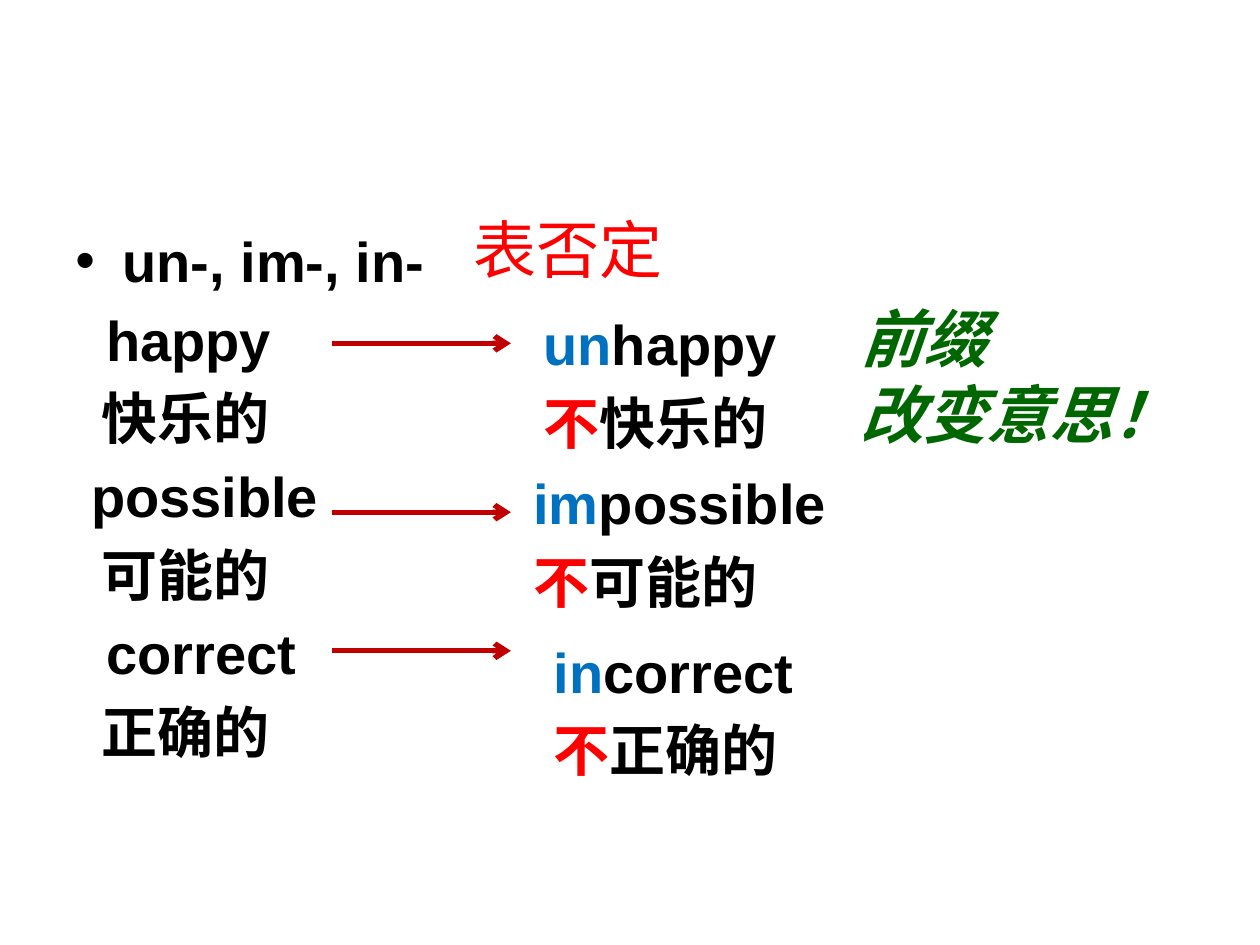
from lxml.etree import SubElement
from pptx import Presentation
from pptx.dml.color import RGBColor
from pptx.enum.shapes import MSO_CONNECTOR as Connector
from pptx.enum.text import MSO_ANCHOR as Anchor
from pptx.oxml.ns import qn
from pptx.util import Inches, Pt

UNIT = Inches(0.1)
BLACK, RED, BLUE, GREEN, CRIMSON = "000000", "FF0000", "0070C0", "006600", "C00000"
LATIN, CHINESE = "Arial", "Noto Sans CJK JP"
WORD = {"name": LATIN, "size": Pt(32), "bold": True}
LABEL = {"name": CHINESE, "size": Pt(36)}
REMARK = {**LABEL, "bold": True, "italic": True}
ARROW_SPAN = (26.35, 40.55)
MEANING_INDENT = 2.1
PAIRS = [
    ("un", "happy", "快乐的", 2.45, 27.25, (42.15, 24.1, 20.7, 12.9)),
    ("im", "possible", "可能的", 1.25, 40.65, (41.35, 36.7, 26.8, 12.9)),
    ("in", "correct", "正确的", 2.45, 51.65, (42.95, 50.1, 31.5, 12.9)),
]


def grid(*cells):
    """Turn grid cells into slide lengths."""
    return [round(cell * UNIT) for cell in cells]


def color(value):
    """Return the colour of a hex string."""
    return RGBColor.from_string(value)


def add_box(page, area):
    """Add an empty wrapping text box on the grid and return its frame."""
    frame = page.shapes.add_textbox(*grid(*area)).text_frame
    settings = {"word_wrap": True, "vertical_anchor": Anchor.TOP}
    for name, value in settings.items():
        setattr(frame, name, value)
    return frame


def next_para(frame):
    """Return the empty first paragraph or a new one."""
    return frame.add_paragraph() if frame.paragraphs[0].runs else frame.paragraphs[0]


def add_span(para, text, ink, style):
    """Add one styled run to a paragraph."""
    span = para.add_run()
    span.text = text
    for name, value in style.items():
        setattr(span.font, name, value)
    span.font.color.rgb = color(ink)
    SubElement(span.font._element, qn("a:ea"), typeface=style["name"])


def set_layout(para, left=0, hang=0, spaced=False, bullet=None):
    """Set the indents, the proportional space before and the bullet."""
    props = para._p.get_or_add_pPr()
    margin, indent = grid(left, -hang)
    props.set("marL", str(margin))
    props.set("indent", str(indent))
    if spaced:
        SubElement(SubElement(props, qn("a:spcBef")), qn("a:spcPct"), val="20000")
    if bullet:
        SubElement(props, qn("a:buFont"), typeface=LATIN)
        SubElement(props, qn("a:buChar"), char=bullet)


def add_word_list(page, area):
    """Place the prefixes and the base words with their meanings."""
    frame = add_box(page, area)
    heading = next_para(frame)
    set_layout(heading, 3.75, 3.75, bullet="•")
    add_span(heading, "un-, im-, in-", BLACK, WORD)
    for _, word, meaning, indent, _, _ in PAIRS:
        for text, left in ((word, indent), (meaning, MEANING_INDENT)):
            para = next_para(frame)
            set_layout(para, left, spaced=True)
            add_span(para, text, BLACK, WORD)


def add_negative(page, area, prefix, word, meaning):
    """Place a prefixed word above its negated meaning."""
    frame = add_box(page, area)
    rows = ((prefix, BLUE, word), ("不", RED, meaning))
    for row, (start, ink, rest) in enumerate(rows):
        para = next_para(frame)
        set_layout(para, 3.75, 3.75, spaced=row > 0)
        add_span(para, start, ink, WORD)
        add_span(para, rest, BLACK, WORD)


def add_arrow(page, row):
    """Draw an arrow from the base word to the negative word."""
    start, end = ARROW_SPAN
    arrow = page.shapes.add_connector(Connector.STRAIGHT, *grid(start, row, end, row))
    arrow.line.width = Pt(3)
    arrow.line.color.rgb = color(CRIMSON)
    SubElement(arrow.line._get_or_add_ln(), qn("a:tailEnd"), type="arrow")
    SubElement(arrow._element.spPr, qn("a:effectLst"))


def add_note(page, area, lines, ink, style):
    """Place a Chinese note, one paragraph a line."""
    frame = add_box(page, area)
    for line in lines:
        para = next_para(frame)
        para.line_spacing = Pt(43.2)
        add_span(para, line, ink, style)


def main():
    """Build and save the slide."""
    deck = Presentation()
    deck.slide_width, deck.slide_height = grid(100, 75)
    page = deck.slides.add_slide(deck.slide_layouts[6])
    add_word_list(page, (5, 17.5, 90, 49.5))
    for prefix, word, meaning, _, row, area in PAIRS:
        add_arrow(page, row)
        add_negative(page, area, prefix, word, meaning)
    add_note(page, (36.6, 16.2, 22.8, 7.1), ["表否定"], RED, LABEL)
    add_note(page, (67.3, 23.3, 28.3, 13.1), ["前缀", "改变意思！"], GREEN, REMARK)
    deck.save("out.pptx")


if __name__ == "__main__":
    main()
